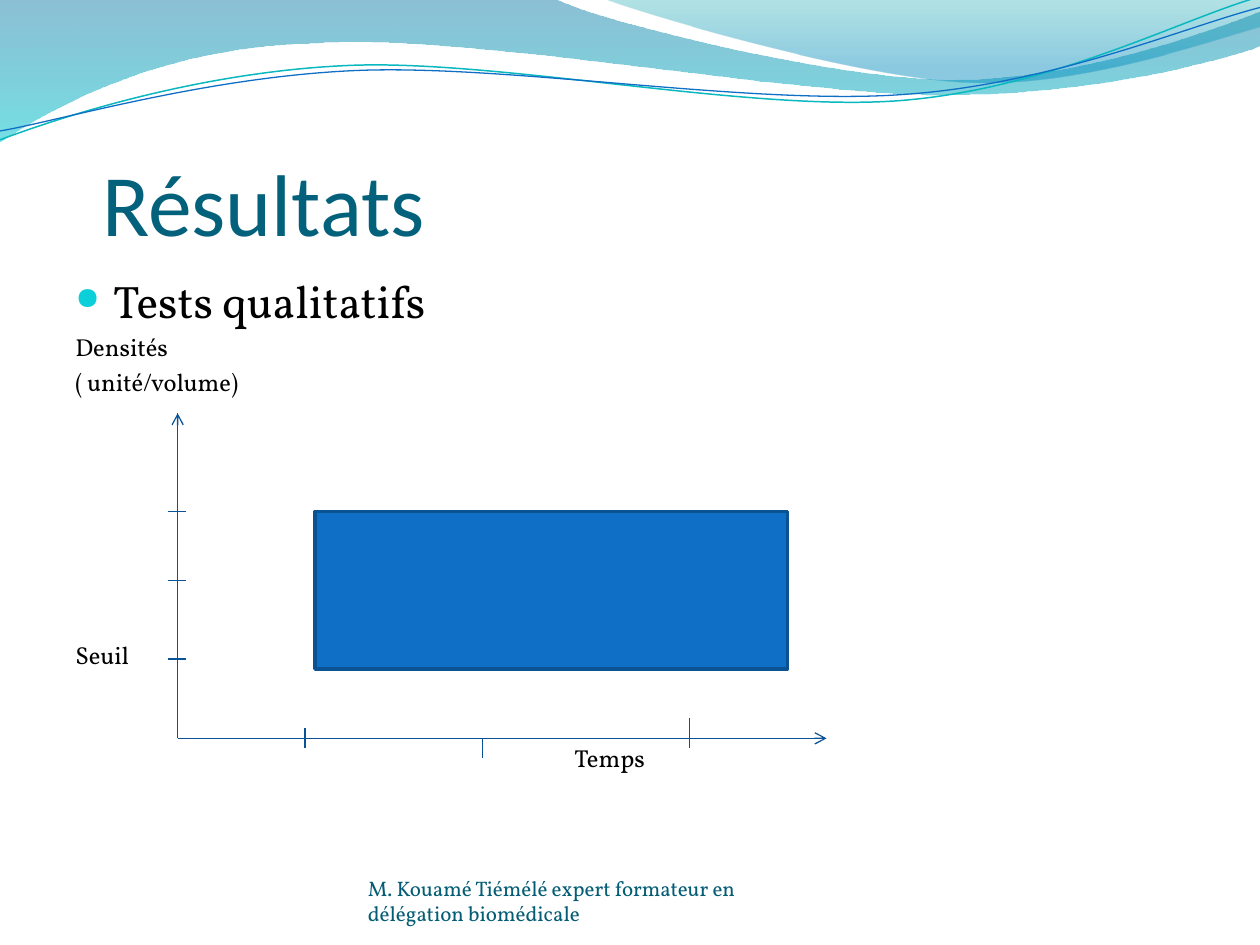
import math

import pptx
import pptx.dml.color
import pptx.enum.shapes
import pptx.enum.text
import pptx.oxml
import pptx.oxml.ns
import pptx.util

RGBColor = pptx.dml.color.RGBColor
TEAL = RGBColor(0x04, 0x61, 0x7B)
FOOTER = RGBColor(0x04, 0x5D, 0x75)
CYAN = RGBColor(0x0B, 0xD0, 0xD9)
WAVE = RGBColor(0x0A, 0xB8, 0xBF)
BLUE = RGBColor(0x0F, 0x6F, 0xC6)
AXIS = RGBColor(0x09, 0x52, 0x95)
BORDER = RGBColor(0x0B, 0x52, 0x92)
BLACK = RGBColor(0, 0, 0)
BAND_TOP, BAND_END = RGBColor(0, 0x74, 0xA1), RGBColor(0, 0xC6, 0xCF)
CREST_TOP, CREST_END = RGBColor(0, 0xA1, 0xA9), RGBColor(0, 0x8B, 0xBF)
NS = pptx.oxml.ns.nsdecls("a")
ANCHOR = pptx.enum.text.MSO_ANCHOR

prs = pptx.Presentation()
prs.slide_width = pptx.util.Inches(10)
prs.slide_height = pptx.util.Inches(7.5)
col = prs.slide_width / 10
row = prs.slide_height / 7.5
slide = prs.slides.add_slide(prs.slide_layouts[5])
shapes = slide.shapes


def add_outline(start, segments, close):
    grid = [[(round(x * col), round(y * row)) for x, y in seg] for seg in segments]
    ends = [seg[-1] for seg in grid]
    first = (round(start[0] * col), round(start[1] * row))
    builder = shapes.build_freeform(*first, scale=1.0)
    builder.add_line_segments(ends, close=close)
    sp = builder.convert_to_shape()
    sp.shadow.inherit = False
    for line, seg in zip(sp._element.spPr.xpath(".//a:lnTo"), grid):
        if len(seg) == 3:
            pts = "".join(f'<a:pt x="{x - sp.left}" y="{y - sp.top}"/>' for x, y in seg)
            curve = pptx.oxml.parse_xml(f"<a:cubicBezTo {NS}>{pts}</a:cubicBezTo>")
            line.getparent().replace(line, curve)
    return sp


def add_text(left, top, width, height, lines, color, frame):
    sp = shapes.add_textbox(int(left * col), int(top * row), int(width * col), int(height * row))
    tf = sp.text_frame
    for name, value in {"word_wrap": True, **frame}.items():
        setattr(tf, name, value)
    for i, (line, size, gap, indent) in enumerate(lines):
        p = tf.paragraphs[0] if i == 0 else tf.add_paragraph()
        p.space_before = pptx.util.Pt(gap)
        p._p.get_or_add_pPr().set("marL", str(int(indent * col)))
        r = p.add_run()
        r.text = line
        for name, value in {"name": "Vollkorn", "size": pptx.util.Pt(size)}.items():
            setattr(r.font, name, value)
        r.font.color.rgb = color
    return tf


bands = [
    ((0, 0), [[(4.4, -0.01)], [(4.76, 0.17), (6.64, 0.63), (7.58, 0.63)],
              [(8.53, 0.63), (9.58, 0.26), (10, 0.09)], [(10.01, 0.36)],
              [(9.83, 0.44), (8.7, 0.76), (7.46, 0.75)], [(6.22, 0.75), (3.82, 0.28), (2.57, 0.34)],
              [(1.29, 0.36), (0.46, 0.83), (-0.01, 1.13)], [(0, 0)]],
     [(0, BAND_TOP, 45), (1, BAND_END, 55)]),
    ((4.79, -0.01), [[(5.09, 0.11), (6.82, 0.62), (7.69, 0.65)],
                     [(8.56, 0.69), (9.61, 0.32), (10, 0.21)], [(10, 0)], [(4.79, -0.01)]],
     [(0, CREST_TOP, 30), (0.8, CREST_END, 45)]),
]
for start, segments, stops in bands:
    sp = add_outline(start, segments, True)
    sp.line.fill.background()
    sp.fill.gradient()
    sp.fill.gradient_angle = 270
    for stop, (position, color, _) in zip(sp.fill.gradient_stops, stops):
        stop.position = position
        stop.color.rgb = color
    for clr, (_, _, opacity) in zip(sp._element.spPr.xpath(".//a:gs/a:srgbClr"), stops):
        clr.append(pptx.oxml.parse_xml(f'<a:alpha {NS} val="{opacity * 1000}"/>'))

waves = [
    ([(0, 1.11), (0.48, 0.93), (1.58, 0.57), (2.77, 0.52), (3.95, 0.47), (5.93, 0.89),
      (7.13, 0.8), (8.33, 0.71), (9.38, 0.15), (9.98, -0.02)], WAVE, 0.85),
    ([(0, 1.04), (0.47, 0.96), (1.64, 0.61), (2.83, 0.56), (4.03, 0.51), (5.97, 0.84),
      (7.17, 0.75), (8.36, 0.67), (9.41, 0.21), (10, 0.06)], BLUE, 0.75),
]
tilt = -2.7
cos, sin = math.cos(math.radians(-tilt)), math.sin(math.radians(-tilt))
cx, cy = 5, 0.58
for points, color, weight in waves:
    level = [(cx + (x - cx) * cos - (y - cy) * sin, cy + (x - cx) * sin + (y - cy) * cos)
             for x, y in points]
    sp = add_outline(level[0], [level[i:i + 3] for i in (1, 4, 7)], False)
    sp.rotation = tilt
    sp.fill.background()
    sp.line.color.rgb = color
    sp.line.width = pptx.util.Pt(weight)

title = shapes.title
box = {"left": 0.5 * col, "top": 0.77 * row, "width": 9 * col, "height": 1.25 * row}
for name, value in box.items():
    setattr(title, name, int(value))
tf = title.text_frame
frame = {"text": "Résultats", "vertical_anchor": ANCHOR.BOTTOM, "margin_left": int(0.31 * col),
         "margin_right": 0, "margin_top": int(0.05 * row), "margin_bottom": 0,
         "auto_size": pptx.enum.text.MSO_AUTO_SIZE.NONE}
for name, value in frame.items():
    setattr(tf, name, value)
p = tf.paragraphs[0]
p.alignment = pptx.enum.text.PP_ALIGN.LEFT
for name, value in {"name": "Calibri", "size": pptx.util.Pt(50)}.items():
    setattr(p.runs[0].font, name, value)
p.runs[0].font.color.rgb = TEAL

body = [("Tests qualitatifs", 26, 0, 0.3), ("Densités", 14, 2.5, 0), ("( unité/volume)", 14, 3, 0),
        ("Seuil", 14, 139.5, 0), ("Temps", 14, 42, 3.96)]
tf = add_text(0.5, 2.12, 9, 4.8, body, BLACK, {"vertical_anchor": ANCHOR.TOP})
pPr = tf.paragraphs[0]._p.get_or_add_pPr()
pPr.set("indent", str(int(-0.3 * col)))
for xml in (f'<a:buClr {NS}><a:srgbClr val="{CYAN}"/></a:buClr>',
            f'<a:buSzPct {NS} val="68000"/>',
            f'<a:buChar {NS} char="●"/>'):
    pPr.append(pptx.oxml.parse_xml(xml))

x0, y0 = 1.41, 5.86
axes = [(x0, 3.28, x0, y0, False), (x0, y0, 6.48, y0, False),
        (x0, 3.44, x0, 3.28, True), (6.41, y0, 6.56, y0, True)]
x_ticks = [(x, top, x, bottom, False)
           for x, top, bottom in ((2.42, 5.78, 5.94), (3.83, y0, 6.02), (5.47, 5.7, 5.94))]
y_ticks = [(x0 - 0.08, y, x0 + 0.07, y, False) for y in (5.23, 4.61, 4.06)]
for xa, ya, xb, yb, arrow in axes + x_ticks + y_ticks:
    sp = shapes.add_connector(pptx.enum.shapes.MSO_CONNECTOR.STRAIGHT,
                              int(xa * col), int(ya * row), int(xb * col), int(yb * row))
    sp.line.color.rgb = AXIS
    sp.line.width = pptx.util.Pt(0.75)
    if arrow:
        sp.line._get_or_add_ln().append(pptx.oxml.parse_xml(f'<a:tailEnd {NS} type="arrow"/>'))
    sp._element.spPr.append(pptx.oxml.parse_xml(f"<a:effectLst {NS}/>"))

sp = shapes.add_shape(pptx.enum.shapes.MSO_SHAPE.FLOWCHART_PROCESS,
                      int(2.5 * col), int(4.06 * row), int(3.75 * col), int(1.25 * row))
sp.shadow.inherit = False
sp.fill.solid()
sp.fill.fore_color.rgb = BLUE
sp.line.color.rgb = BORDER
sp.line.width = pptx.util.Pt(2)

flush = {f"margin_{side}": 0 for side in ("left", "right", "top", "bottom")}
add_text(2.92, 6.95, 3.67, 0.4,
         [("M. Kouamé Tiémélé expert formateur en délégation biomédicale", 12, 0, 0)],
         FOOTER, {"vertical_anchor": ANCHOR.BOTTOM, **flush})

prs.save("out.pptx")
